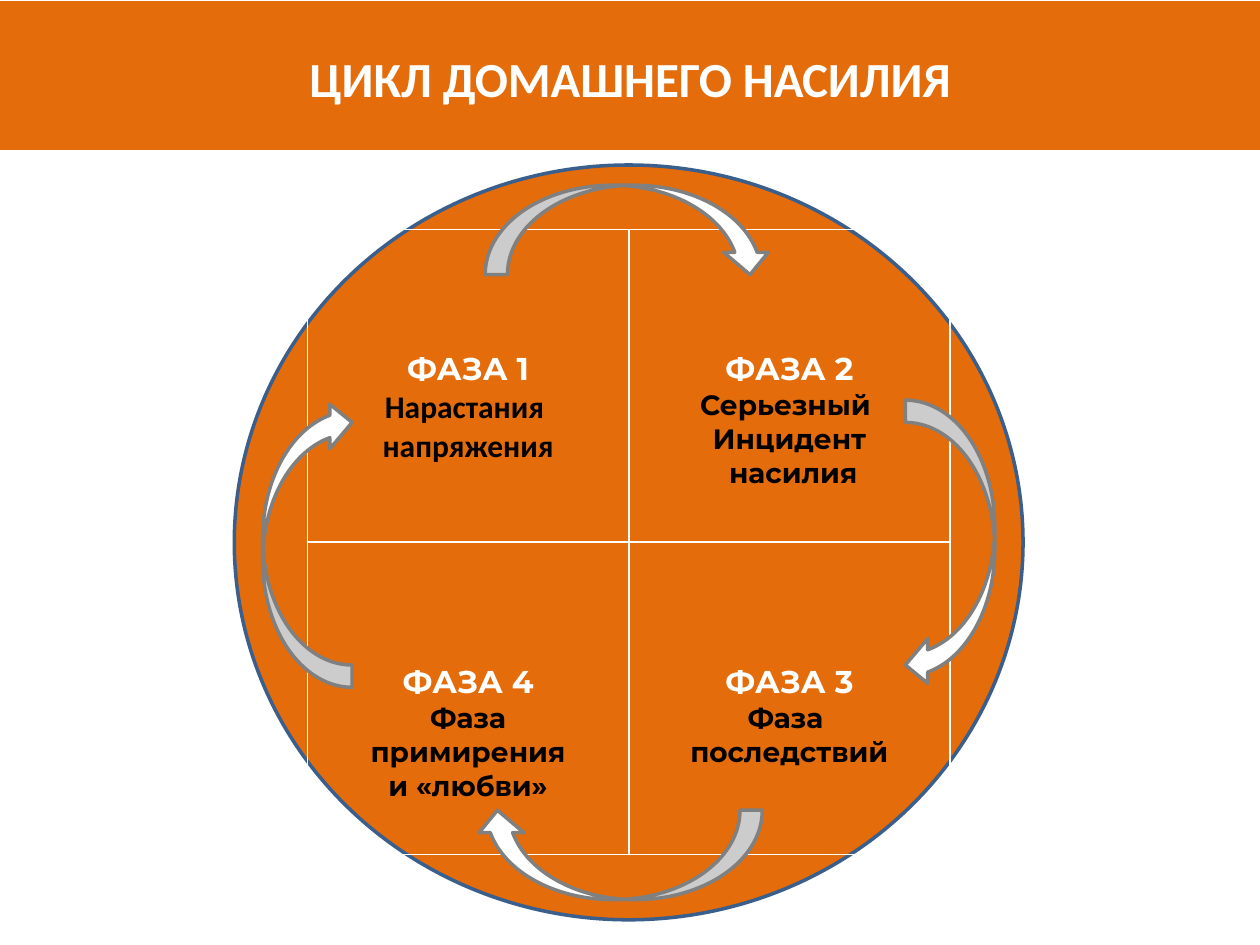
from dataclasses import dataclass

from pptx import Presentation
from pptx.dml.color import RGBColor
from pptx.enum.shapes import MSO_SHAPE
from pptx.enum.text import MSO_ANCHOR, PP_ALIGN
from pptx.util import Inches, Pt

RECTANGLE = MSO_SHAPE.RECTANGLE
OVAL = MSO_SHAPE.OVAL
CURVED_ARROW = MSO_SHAPE.CURVED_DOWN_ARROW
CENTER = PP_ALIGN.CENTER
TOP = MSO_ANCHOR.TOP
MIDDLE = MSO_ANCHOR.MIDDLE

ORANGE = RGBColor(0xE4, 0x6C, 0x0A)
WHITE = RGBColor(0xFF, 0xFF, 0xFF)
BLACK = RGBColor(0, 0, 0)
BLUE = RGBColor(0x3A, 0x5F, 0x8C)
GRAY = RGBColor(0x80, 0x80, 0x80)

SLIDE_WIDTH, SLIDE_HEIGHT = Inches(10), Inches(7.5)
GRID_COLUMNS, GRID_ROWS = 100, 75
ARROW_COLUMNS, ARROW_ROWS = 22.8, 7.1
PHASE_COLUMNS, PHASE_ROWS = 25.5, 24.8
PHASE_TOP_ROWS = 9.6


@dataclass(frozen=True)
class Phase:
    row: int
    column: int
    heading: str
    lines: tuple[str, ...]
    font: str = "Montserrat"
    size: int = 16


@dataclass(frozen=True)
class Arrow:
    center_column: float
    center_row: float
    rotation: int


PHASES = (
    Phase(0, 0, "ФАЗА 1", ("Нарастания ", "напряжения"), "Calibri", 18),
    Phase(0, 1, "ФАЗА 2", ("Серьезный ", "Инцидент", " насилия")),
    Phase(1, 0, "ФАЗА 4", ("Фаза", " примирения ", "и «любви»")),
    Phase(1, 1, "ФАЗА 3", ("Фаза ", "последствий")),
)
ARROWS = (
    Arrow(49.9, 18.25, 0),
    Arrow(75.4, 43.15, 90),
    Arrow(49.1, 67.85, 180),
    Arrow(24.4, 43.15, 270),
)


def across(columns: float) -> int:
    """Return the width of a number of grid columns."""
    return round(SLIDE_WIDTH * columns / GRID_COLUMNS)


def down(rows: float) -> int:
    """Return the height of a number of grid rows."""
    return round(SLIDE_HEIGHT * rows / GRID_ROWS)


def write(paragraph, text: str, *, size: int, font: str, color: RGBColor) -> None:
    """Write one centred bold line into a paragraph."""
    paragraph.alignment = CENTER
    run = paragraph.add_run()
    run.text = text
    run.font.size = Pt(size)
    run.font.name = font
    run.font.bold = True
    run.font.color.rgb = color


def add_filled(slide, kind, left: float, top: float, columns: float, rows: float,
               *, fill: RGBColor, line: RGBColor | None = None):
    """Add a preset shape placed on the grid."""
    shape = slide.shapes.add_shape(kind, across(left), down(top), across(columns), down(rows))
    shape.shadow.inherit = False
    shape.fill.solid()
    shape.fill.fore_color.rgb = fill
    if line is None:
        shape.line.fill.background()
    else:
        shape.line.color.rgb = line
        shape.line.width = Pt(2)
    return shape


def add_title(slide, text: str) -> None:
    """Add the title band."""
    band = add_filled(slide, RECTANGLE, 0, 0.1, GRID_COLUMNS, 11.8, fill=ORANGE)
    frame = band.text_frame
    frame.word_wrap = True
    frame.vertical_anchor = MIDDLE
    frame.margin_top = down(0.9)
    write(frame.paragraphs[0], text, size=28, font="Calibri", color=WHITE)


def add_phases(slide, phases: tuple[Phase, ...]) -> None:
    """Add the two by two table of phases."""
    table = slide.shapes.add_table(2, 2, across(24.4), down(18.2),
                                   across(2 * PHASE_COLUMNS), down(2 * PHASE_ROWS)).table
    table.first_row = table.horz_banding = False
    for column in table.columns:
        column.width = across(PHASE_COLUMNS)
    for row in table.rows:
        row.height = down(PHASE_ROWS)
    for phase in phases:
        cell = table.cell(phase.row, phase.column)
        cell.fill.background()
        cell.vertical_anchor = TOP
        cell.margin_top = down(PHASE_TOP_ROWS)
        frame = cell.text_frame
        write(frame.paragraphs[0], phase.heading, size=18, font="Montserrat", color=WHITE)
        for line in phase.lines:
            write(frame.add_paragraph(), line, size=phase.size, font=phase.font, color=BLACK)


def add_arrow(slide, arrow: Arrow) -> None:
    """Add a curved arrow turned around its centre."""
    shape = add_filled(slide, CURVED_ARROW, arrow.center_column - ARROW_COLUMNS / 2,
                       arrow.center_row - ARROW_ROWS / 2, ARROW_COLUMNS, ARROW_ROWS,
                       fill=WHITE, line=GRAY)
    shape.rotation = arrow.rotation


def main() -> None:
    """Build the slide and save it."""
    presentation = Presentation()
    presentation.slide_width, presentation.slide_height = SLIDE_WIDTH, SLIDE_HEIGHT
    slide = presentation.slides.add_slide(presentation.slide_layouts[6])
    add_title(slide, "ЦИКЛ ДОМАШНЕГО НАСИЛИЯ")
    add_filled(slide, OVAL, 18.6, 13.1, 62.6, 59.9, fill=ORANGE, line=BLUE)
    add_phases(slide, PHASES)
    for arrow in ARROWS:
        add_arrow(slide, arrow)
    presentation.save("out.pptx")


if __name__ == "__main__":
    main()
